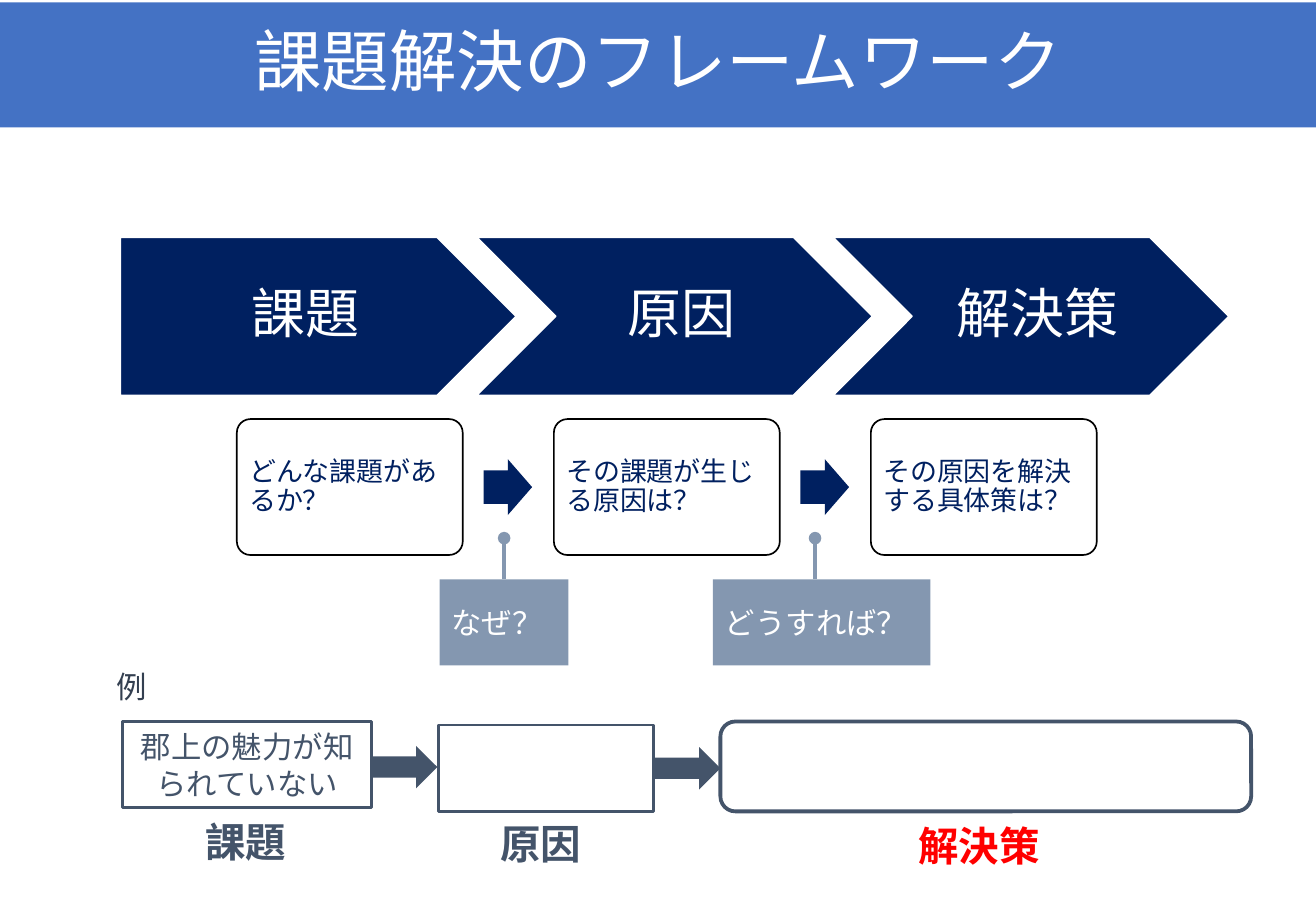
from lxml import etree
from pptx import Presentation
from pptx.dml.color import RGBColor
from pptx.enum import shapes, text
from pptx.oxml.ns import qn
from pptx.util import Pt

TITLE = "課題解決のフレームワーク"
STEPS = [
    ("課題", "どんな課題があるか？"),
    ("原因", "その課題が生じる原因は？"),
    ("解決策", "その原因を解決する具体策は？"),
]
# text, left, width, pin position
CALLOUTS = [("なぜ？", 260.6, 76.3, 298.8), ("どうすれば？", 422.6, 128.9, 483.1)]
# kind, text, (left, top, width, height), line width
EXAMPLES = [
    ("RECTANGLE", "郡上の魅力が知られていない", (72.7, 427.7, 147.6, 51.1), 1.5),
    ("RECTANGLE", "", (259.9, 429.8, 127.4, 51.1), 1.5),
    ("ROUNDED_RECTANGLE", "", (427, 427.7, 314.6, 53.3), 2.25),
]
EXAMPLE_ARROWS = [(219.6, 442.1, 39.6, 25.2), (387.4, 442.8, 39.6, 25.2)]
# text, box, size name, colour name, bold
LABELS = [
    ("課題", (114.5, 481, 67.7, 36), "label", "slate", True),
    ("原因", (289.4, 481.7, 67.7, 36), "label", "slate", True),
    ("解決策", (537.1, 483.1, 124.6, 36), "label", "red", True),
    ("例", (61.9, 392.4, 30.2, 28.8), "body", "dark_slate", False),
]

THEME = {
    "font": "Noto Sans CJK JP",
    "colors": {
        name: RGBColor.from_string(value)
        for name, value in {
            "blue": "4472C4", "navy": "002060", "slate": "44546A",
            "dark_slate": "333F50", "mist": "8497B0", "red": "FF0000",
            "white": "FFFFFF", "black": "000000",
        }.items()
    },
    "sizes": {"title": 40, "step": 32, "label": 24, "body": 18, "question": 16},
}
COLORS = THEME["colors"]

SLIDE_SIZE = (780, 540)
STEP_LEFT, STEP_TOP, STEP_PITCH, STEP_SIZE = 71.3, 140.6, 211.2, (234.7, 93.8)
CARD_LEFT, CARD_TOP, CARD_PITCH, CARD_SIZE = 140.4, 248.4, 187.9, (133.9, 80.6)
CARD_ARROW_SHIFT, CARD_ARROW_TOP, CARD_ARROW_SIZE = 146.2, 272.2, (28.8, 33.1)
CALLOUT_TOP, CALLOUT_HEIGHT, PIN_TOP = 343.4, 51.1, 319
STEP_INSETS = (11.5, 3.6, 3.6, 3.6)
CARD_INSETS = (5, 5, 5, 5)


def write(shape, content, size, color, align="LEFT", anchor="MIDDLE",
          bold=False, spacing=1.0, insets=(7.2, 3.6, 7.2, 3.6)):
    frame = shape.text_frame
    left, top, right, bottom = map(Pt, insets)
    frame_format = {
        "word_wrap": True, "vertical_anchor": text.MSO_ANCHOR[anchor],
        "margin_left": left, "margin_top": top,
        "margin_right": right, "margin_bottom": bottom,
    }
    for name, value in frame_format.items():
        setattr(frame, name, value)
    paragraph = frame.paragraphs[0]
    paragraph.alignment = text.PP_ALIGN[align]
    paragraph.line_spacing = spacing
    run = paragraph.add_run()
    run.text = content
    run.font.color.rgb = COLORS[color]
    font_format = {"name": THEME["font"], "size": Pt(THEME["sizes"][size]), "bold": bold}
    for name, value in font_format.items():
        setattr(run.font, name, value)
    east_asian = etree.SubElement(run.font._element, qn("a:ea"))
    east_asian.set("typeface", THEME["font"])


def add_shape(slide, kind, box, fill=None, line=None, width=1, adjustments=()):
    shape = slide.shapes.add_shape(shapes.MSO_SHAPE[kind], *map(Pt, box))
    shape.shadow.inherit = False
    for index, value in enumerate(adjustments):
        shape.adjustments[index] = value
    for target, color in ((shape.fill, fill), (shape.line.fill, line)):
        if color:
            target.solid()
            target.fore_color.rgb = COLORS[color]
        else:
            target.background()
    if line:
        shape.line.width = Pt(width)
    return shape


def add_pin(slide, x):
    """Draw an upright line that ends in a dot at the top."""
    pin = slide.shapes.add_connector(
        shapes.MSO_CONNECTOR.STRAIGHT, Pt(x), Pt(CALLOUT_TOP), Pt(x), Pt(PIN_TOP))
    pin.line.color.rgb = COLORS["mist"]
    pin.line.width = Pt(2.5)
    etree.SubElement(pin.line._get_or_add_ln(), qn("a:tailEnd")).set("type", "oval")
    etree.SubElement(pin._element.spPr, qn("a:effectLst"))


def add_steps(slide):
    for index, (name, question) in enumerate(STEPS):
        step = add_shape(
            slide, "CHEVRON" if index else "PENTAGON",
            (STEP_LEFT + index * STEP_PITCH, STEP_TOP, *STEP_SIZE), "navy", "white")
        write(step, name, "step", "white", "CENTER", spacing=0.9, insets=STEP_INSETS)

        left = CARD_LEFT + index * CARD_PITCH
        card = add_shape(slide, "ROUNDED_RECTANGLE", (left, CARD_TOP, *CARD_SIZE),
                         "white", "black", adjustments=[0.1])
        write(card, question, "question", "navy", spacing=0.9, insets=CARD_INSETS)
        if index < len(STEPS) - 1:
            add_shape(slide, "RIGHT_ARROW",
                      (left + CARD_ARROW_SHIFT, CARD_ARROW_TOP, *CARD_ARROW_SIZE),
                      "navy", adjustments=[0.6, 0.5])


def add_callouts(slide):
    for content, left, width, pin_x in CALLOUTS:
        callout = add_shape(
            slide, "RECTANGLE", (left, CALLOUT_TOP, width, CALLOUT_HEIGHT), "mist")
        write(callout, content, "body", "white")
        add_pin(slide, pin_x)


def add_example(slide):
    for kind, content, box, width in EXAMPLES:
        example = add_shape(slide, kind, box, line="slate", width=width)
        if content:
            write(example, content, "body", "slate", "CENTER")
    for box in EXAMPLE_ARROWS:
        add_shape(slide, "RIGHT_ARROW", box, "slate")
    for content, box, size, color, bold in LABELS:
        label = slide.shapes.add_textbox(*map(Pt, box))
        write(label, content, size, color, anchor="TOP", bold=bold)


def main():
    presentation = Presentation()
    presentation.slide_width, presentation.slide_height = map(Pt, SLIDE_SIZE)
    slide = presentation.slides.add_slide(presentation.slide_layouts[6])
    banner = add_shape(slide, "RECTANGLE", (0, 1.4, SLIDE_SIZE[0], 74.2), "blue")
    write(banner, TITLE, "title", "white", "CENTER", spacing=0.9)
    add_steps(slide)
    add_callouts(slide)
    add_example(slide)
    presentation.save("out.pptx")


if __name__ == "__main__":
    main()
